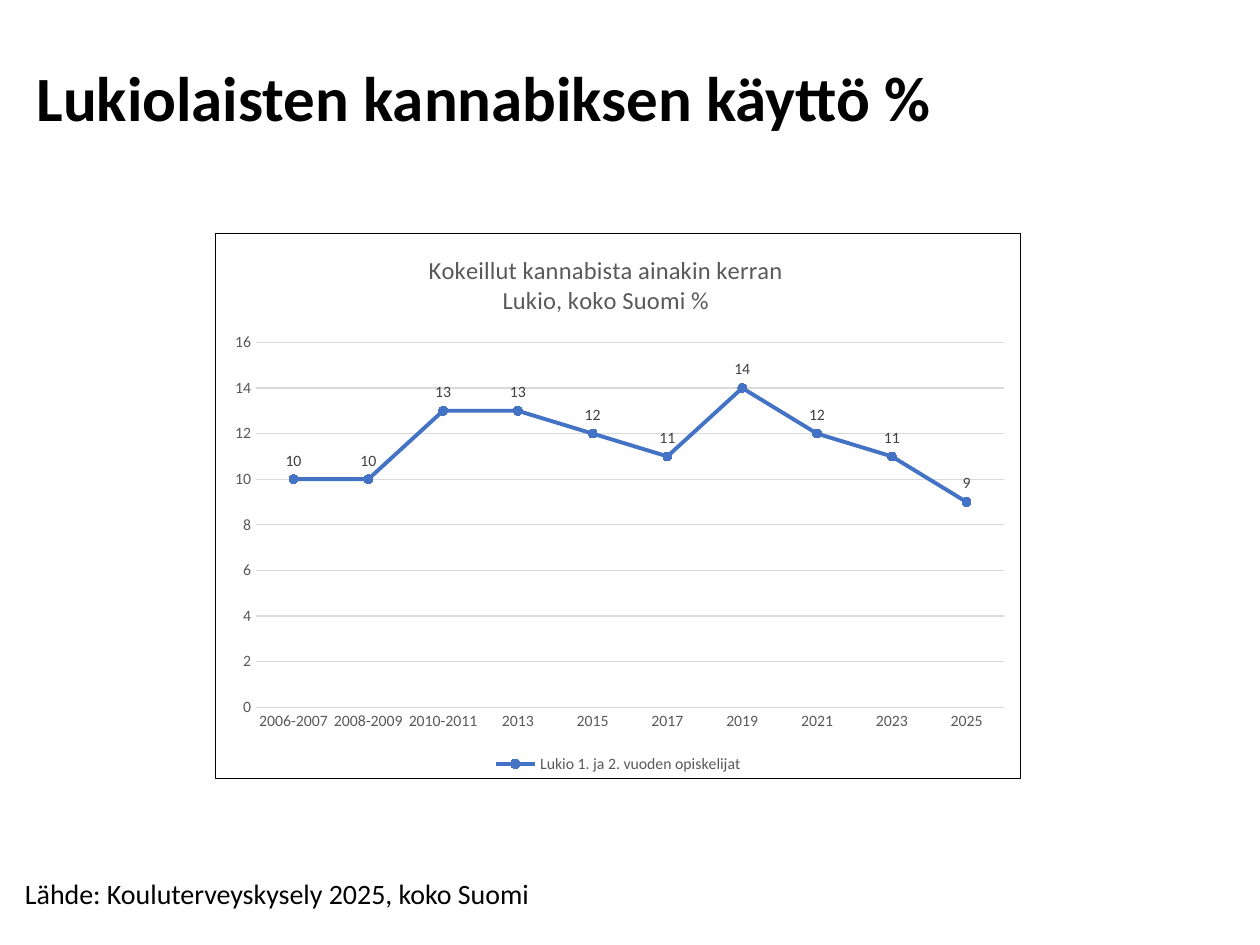
from dataclasses import dataclass

from pptx import Presentation
from pptx.chart.data import CategoryChartData
from pptx.dml.color import RGBColor
from pptx.enum.chart import XL_CHART_TYPE as ChartType
from pptx.enum.chart import XL_LABEL_POSITION as LabelPosition
from pptx.enum.chart import XL_LEGEND_POSITION as LegendPosition
from pptx.enum.chart import XL_MARKER_STYLE as MarkerStyle
from pptx.enum.chart import XL_TICK_MARK as TickMark
from pptx.enum.text import MSO_ANCHOR as Anchor
from pptx.enum.text import MSO_AUTO_SIZE as AutoSize
from pptx.enum.text import PP_ALIGN as Align
from pptx.oxml import parse_xml
from pptx.oxml.ns import nsdecls, qn
from pptx.util import Inches, Pt


@dataclass(frozen=True)
class Theme:
    font: str = "Calibri"
    black: str = "000000"
    white: str = "FFFFFF"
    gray: str = "595959"
    label: str = "404040"
    grid: str = "D9D9D9"
    accent: str = "4472C4"
    title_size: int = 36
    source_size: int = 16
    chart_title_size: int = 14
    chart_size: int = 9


THEME = Theme()
YEARS = ["2006-2007", "2008-2009", "2010-2011", "2013", "2015",
         "2017", "2019", "2021", "2023", "2025"]
SHARES = [10, 10, 13, 13, 12, 11, 14, 12, 11, 9]


def style_font(font, size, color, bold=False):
    font.name = THEME.font
    font.size = Pt(size)
    font.bold = bold
    font.color.rgb = RGBColor.from_string(color)


def write_text(frame, text, size, color=THEME.black, bold=False,
               align=Align.LEFT, spacing=None):
    for index, line in enumerate(text.split("\n")):
        paragraph = frame.add_paragraph() if index else frame.paragraphs[0]
        paragraph.alignment = align
        if spacing:
            paragraph.line_spacing = spacing
        run = paragraph.add_run()
        run.text = line
        style_font(run.font, size, color, bold)


def style_line(line, color, width):
    line.color.rgb = RGBColor.from_string(color)
    line.width = Pt(width)


def fill_solid(fill, color):
    fill.solid()
    fill.fore_color.rgb = RGBColor.from_string(color)


def place_part(parent, target=None, **fractions):
    layout = parent.find(qn("c:layout"))
    if layout is None:
        layout = parse_xml(f"<c:layout {nsdecls('c')}/>")
        parent.insert(0, layout)
    inner = f'<c:layoutTarget val="{target}"/>' if target else ""
    modes = "".join(f'<c:{key}Mode val="edge"/>' for key in "xy")
    sizes = "".join(f'<c:{key} val="{value}"/>' for key, value in fractions.items())
    layout.append(parse_xml(
        f"<c:manualLayout {nsdecls('c')}>{inner}{modes}{sizes}</c:manualLayout>"))


def frame_chart(chart, color, width):
    chart_space = chart._chartSpace
    chart_space.find(qn("c:chart")).addnext(parse_xml(
        f"<c:spPr {nsdecls('c', 'a')}>"
        f'<a:solidFill><a:srgbClr val="{THEME.white}"/></a:solidFill>'
        f'<a:ln w="{Pt(width)}"><a:solidFill><a:srgbClr val="{color}"/></a:solidFill></a:ln>'
        "</c:spPr>"))


def style_axes(chart):
    for axis in (chart.category_axis, chart.value_axis):
        axis.major_tick_mark = TickMark.NONE
        axis.minor_tick_mark = TickMark.NONE
        style_font(axis.tick_labels.font, THEME.chart_size, THEME.gray)
    style_line(chart.category_axis.format.line, THEME.grid, 0.75)
    value_axis = chart.value_axis
    value_axis.minimum_scale = 0
    value_axis.maximum_scale = 16
    value_axis.major_unit = 2
    value_axis.tick_labels.number_format = "0"
    value_axis.tick_labels.number_format_is_linked = False
    value_axis.format.line.fill.background()
    style_line(value_axis.major_gridlines.format.line, THEME.grid, 0.75)


def style_series(series):
    series.smooth = False
    style_line(series.format.line, THEME.accent, 2.25)
    series.marker.style = MarkerStyle.CIRCLE
    series.marker.size = 5
    fill_solid(series.marker.format.fill, THEME.accent)
    style_line(series.marker.format.line, THEME.accent, 0.75)
    labels = series.data_labels
    labels.show_value = True
    labels.position = LabelPosition.ABOVE
    labels.number_format = "0"
    labels.number_format_is_linked = False
    style_font(labels.font, THEME.chart_size, THEME.label)


def add_title(slide, text):
    title = slide.shapes.title
    title.left, title.top = Inches(0.19), Inches(0.3)
    title.width, title.height = Inches(9.13), Inches(1.01)
    frame = title.text_frame
    frame.vertical_anchor = Anchor.MIDDLE
    frame.auto_size = AutoSize.NONE
    write_text(frame, text, THEME.title_size, bold=True, spacing=0.9)


def add_usage_chart(slide):
    data = CategoryChartData(number_format="0")
    data.categories = YEARS
    data.add_series("Lukio 1. ja 2. vuoden opiskelijat", SHARES)
    chart = slide.shapes.add_chart(
        ChartType.LINE_MARKERS_STACKED, Inches(1.71), Inches(1.85),
        Inches(6.39), Inches(4.33), data).chart
    style_font(chart.font, 10, THEME.black)
    frame_chart(chart, THEME.black, 0.5)
    chart.plots[0].vary_by_categories = False
    write_text(chart.chart_title.text_frame,
               "Kokeillut kannabista ainakin kerran\nLukio, koko Suomi %",
               THEME.chart_title_size, THEME.gray, align=Align.CENTER)
    chart.chart_title.include_in_layout = False
    chart.has_legend = True
    chart.legend.position = LegendPosition.BOTTOM
    chart.legend.include_in_layout = False
    style_font(chart.legend.font, THEME.chart_size, THEME.gray)
    style_axes(chart)
    style_series(chart.plots[0].series[0])
    chart_part = chart._chartSpace.find(qn("c:chart"))
    place_part(chart_part.find(qn("c:title")), x=0.26, y=0.03)
    place_part(chart_part.find(qn("c:plotArea")), "inner",
               x=0.05, y=0.2, w=0.93, h=0.67)


def add_source(slide, text):
    box = slide.shapes.add_textbox(Inches(0.1), Inches(6.91), Inches(4.37), Inches(0.37))
    frame = box.text_frame
    frame.word_wrap = True
    frame.auto_size = AutoSize.SHAPE_TO_FIT_TEXT
    write_text(frame, text, THEME.source_size)


def main():
    presentation = Presentation()
    presentation.slide_width, presentation.slide_height = Inches(10), Inches(7.5)
    slide = presentation.slides.add_slide(presentation.slide_layouts[5])
    fill_solid(slide.background.fill, THEME.white)
    add_title(slide, "Lukiolaisten kannabiksen käyttö %")
    add_usage_chart(slide)
    add_source(slide, "Lähde: Kouluterveyskysely 2025, koko Suomi")
    presentation.save("out.pptx")


if __name__ == "__main__":
    main()
